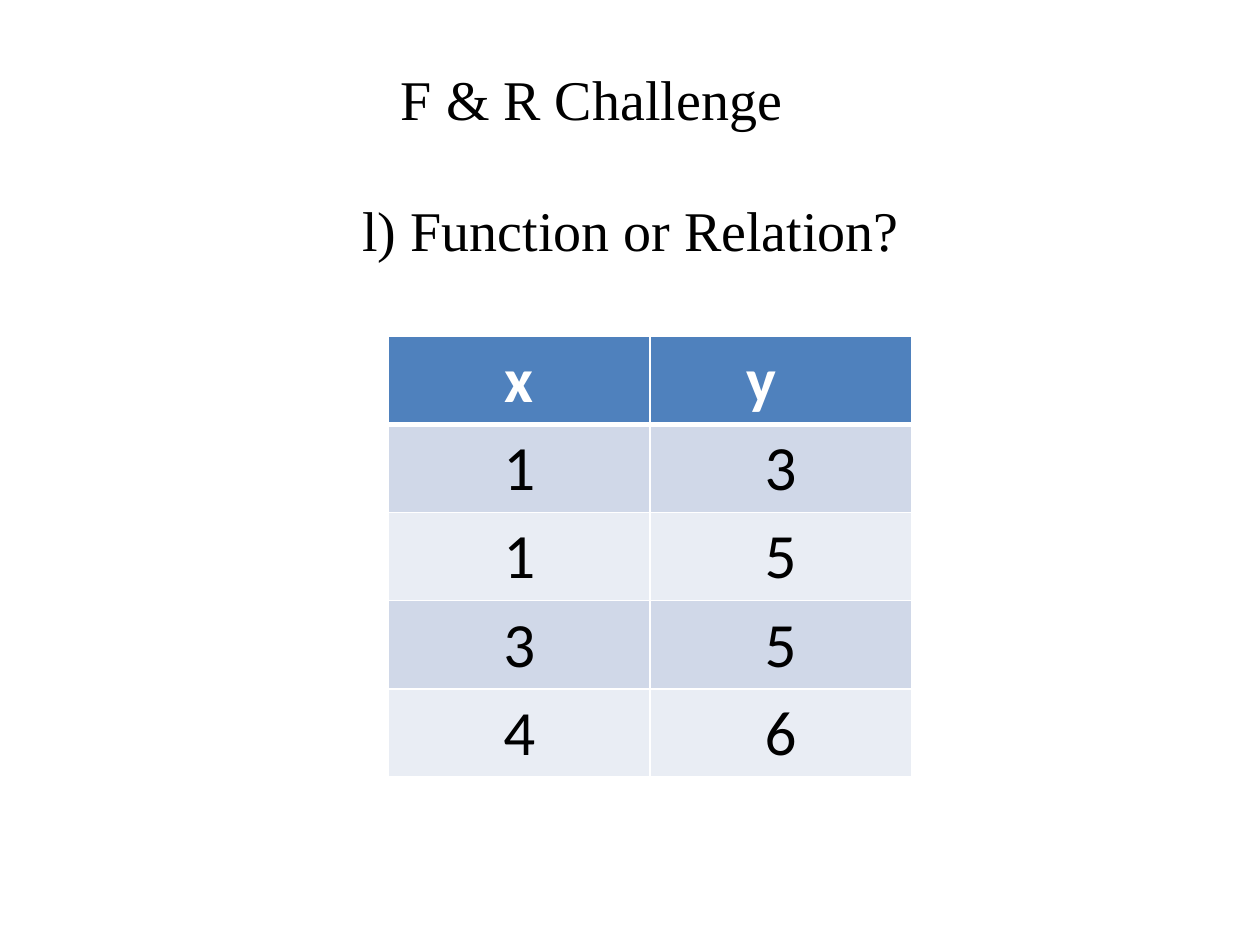
from lxml import etree
from pptx import Presentation
from pptx import util as u
from pptx.dml import color
from pptx.enum import text
from pptx.oxml import ns

COLOURS = {
    "ink": "000000",
    "white": "FFFFFF",
    "header": "4F81BD",
    "odd": "D0D8E8",
    "even": "E9EDF4",
}
HEADINGS = [
    ("F & R Challenge", 222, 29, 235),
    ("l) Function or Relation?", 200, 104, 324),
]
POINTS = [("x", "y"), ("1", "3"), ("1", "5"), ("3", "5"), ("4", "6")]


def rgb(name):
    return color.RGBColor.from_string(COLOURS[name])


def set_values(target, values):
    for name, value in values.items():
        setattr(target, name, value)


def write(frame, words, colour, style):
    span = frame.paragraphs[0].add_run()
    span.text = words
    span.font.color.rgb = rgb(colour)
    set_values(span.font, style)


def add_heading(page, words, left, top, width):
    box = page.shapes.add_textbox(u.Pt(left), u.Pt(top), u.Pt(width), u.Pt(46))
    frame = box.text_frame
    set_values(frame, {"word_wrap": True, "margin_top": u.Pt(7.6), "margin_bottom": 0})
    write(frame, words, "ink", {"name": "Times New Roman", "size": u.Pt(32)})


def add_border(cell, side, width):
    properties = cell._tc.get_or_add_tcPr()
    line = etree.SubElement(properties, ns.qn(f"a:ln{side}"), w=str(u.Pt(width)))
    fill = etree.SubElement(line, ns.qn("a:solidFill"))
    etree.SubElement(fill, ns.qn("a:srgbClr"), val=COLOURS["white"])


def format_cell(cell, words, row):
    heavy = {0: "B", 1: "T"}.get(row)
    for side in "LRTB":
        add_border(cell, side, 3 if side == heavy else 1)
    header = row == 0
    band = "header" if header else "odd" if row % 2 else "even"
    cell.fill.solid()
    cell.fill.fore_color.rgb = rgb(band)
    style = {"name": "Calibri", "size": u.Pt(36), "bold": header}
    write(cell.text_frame, words, "white" if header else "ink", style)
    cell.text_frame.paragraphs[0].alignment = text.PP_ALIGN.CENTER


def add_points_table(page):
    frame = page.shapes.add_table(
        len(POINTS), 2, u.Pt(222), u.Pt(192), u.Pt(298.8), u.Pt(252)
    )
    table = frame.table
    for row, values in enumerate(POINTS):
        for column, words in enumerate(values):
            format_cell(table.cell(row, column), words, row)
    y_header = table.cell(0, 1)
    y_header.margin_left = u.Pt(55)
    y_header.text_frame.paragraphs[0].alignment = text.PP_ALIGN.LEFT


def main():
    deck = Presentation()
    set_values(deck, {"slide_width": u.Pt(720), "slide_height": u.Pt(540)})
    page = deck.slides.add_slide(deck.slide_layouts[6])
    for heading in HEADINGS:
        add_heading(page, *heading)
    add_points_table(page)
    deck.save("out.pptx")


if __name__ == "__main__":
    main()
